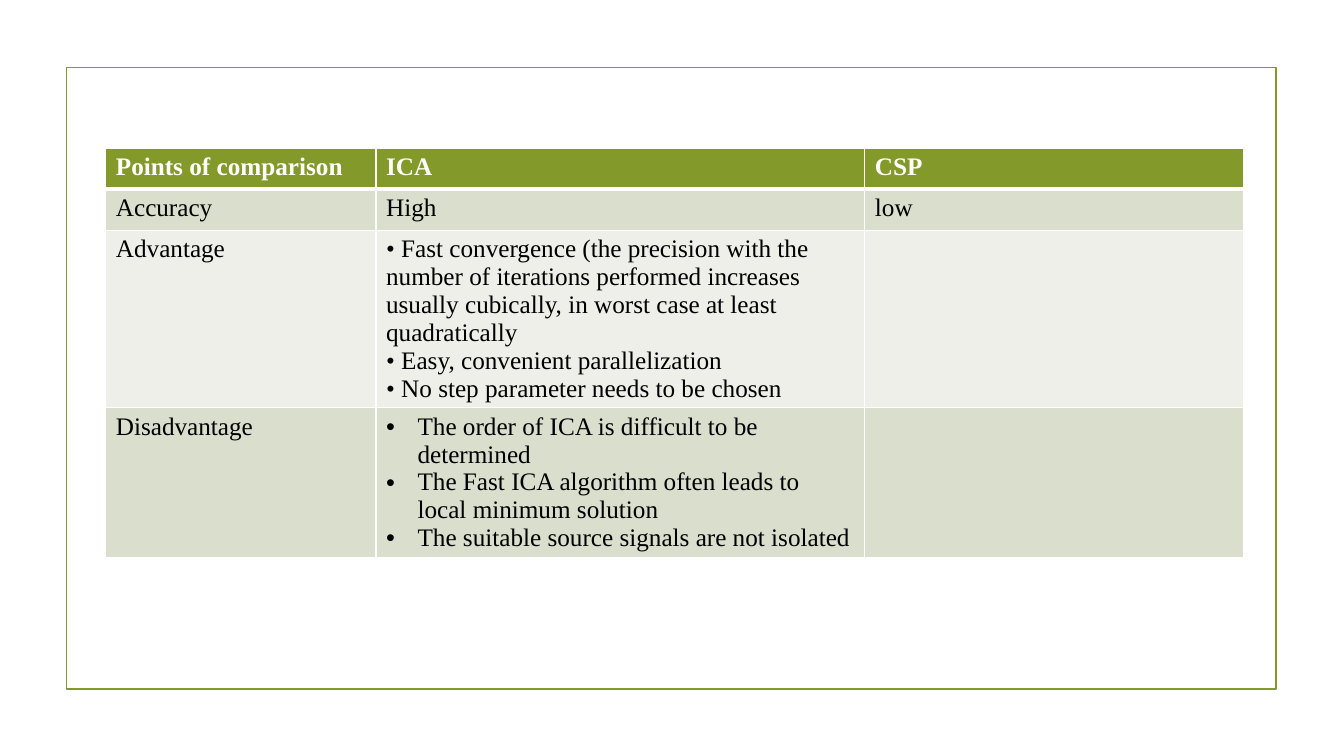
from dataclasses import dataclass
from lxml.etree import SubElement
from pptx import Presentation
from pptx.dml.color import RGBColor as RGB
from pptx.enum.shapes import MSO_SHAPE as Shape
from pptx.oxml.ns import qn
from pptx.util import Pt

# Content: each cell is a list of paragraphs
ROWS = [
    [["Points of comparison"], ["ICA"], ["CSP"]],
    [["Accuracy"], ["High"], ["low"]],
    [["Advantage"],
     ["• Fast convergence (the precision with the number of iterations "
      "performed increases usually cubically, in worst case at least "
      "quadratically",
      "• Easy, convenient parallelization",
      "• No step parameter needs to be chosen"],
     [""]],
    [["Disadvantage"],
     ["The order of ICA is difficult to be determined",
      "The Fast ICA algorithm often leads to local minimum solution",
      "The suitable source signals are not isolated"],
     [""]],
]
LISTS = {(3, 1)}  # cells with hanging bullets
WIDTHS = [193, 349.2, 270.7]
HEIGHTS = [29.2, 29.2, 126.4, 107]
FRAME = (47.5, 48.2, 864, 444.2)
LEFT, TOP = 75.6, 106


@dataclass
class Theme:
    font: str = "Times New Roman"
    size: float = 18
    green: str = "83992A"
    white: str = "FFFFFF"
    black: str = "000000"
    bands: tuple = ("EDEFE8", "D9DECD")
    edge: float = 1
    rule: float = 3
    line: float = 1.25
    indent: float = 22.5


theme = Theme()


def hue(code):
    return RGB.from_string(code)


def add_edges(cell, head):
    props = cell._tc.get_or_add_tcPr()
    for spot, side in enumerate("LRTB"):
        width = theme.rule if head and side == "B" else theme.edge
        line = SubElement(props, qn(f"a:ln{side}"), w=str(Pt(width)))
        fill = SubElement(line, qn("a:solidFill"))
        SubElement(fill, qn("a:srgbClr"), val=theme.white)
        props.insert(spot, line)


def add_bullet(para):
    props = para._p.get_or_add_pPr()
    props.set("marL", str(Pt(theme.indent)))
    props.set("indent", str(-Pt(theme.indent)))
    SubElement(props, qn("a:buFont"), typeface="Arial")
    SubElement(props, qn("a:buChar"), char="•")


def fill_cell(cell, lines, row, listed):
    head = row == 0
    cell.fill.solid()
    cell.fill.fore_color.rgb = hue(theme.green if head else theme.bands[row % 2])
    add_edges(cell, head)
    cell.text = "\n".join(lines)
    for para in cell.text_frame.paragraphs:
        if listed:
            add_bullet(para)
        font = para.font
        font.name, font.size, font.bold = theme.font, Pt(theme.size), head
        font.color.rgb = hue(theme.white if head else theme.black)


def main():
    deck = Presentation()
    deck.slide_width, deck.slide_height = Pt(960), Pt(540)
    slide = deck.slides.add_slide(deck.slide_layouts[6])

    # Frame
    frame = slide.shapes.add_shape(Shape.RECTANGLE, *map(Pt, FRAME))
    frame.shadow.inherit = False
    frame.fill.background()
    frame.line.color.rgb = hue(theme.green)
    frame.line.width = Pt(theme.line)

    # Comparison table
    box = (LEFT, TOP, sum(WIDTHS), sum(HEIGHTS))
    table = slide.shapes.add_table(len(ROWS), len(WIDTHS), *map(Pt, box)).table
    for column, width in zip(table.columns, WIDTHS):
        column.width = Pt(width)
    for row, height in zip(table.rows, HEIGHTS):
        row.height = Pt(height)
    # Odd rows take the darker band
    for row, cells in enumerate(ROWS):
        for col, lines in enumerate(cells):
            fill_cell(table.cell(row, col), lines, row, (row, col) in LISTS)

    deck.save("out.pptx")


if __name__ == "__main__":
    main()
